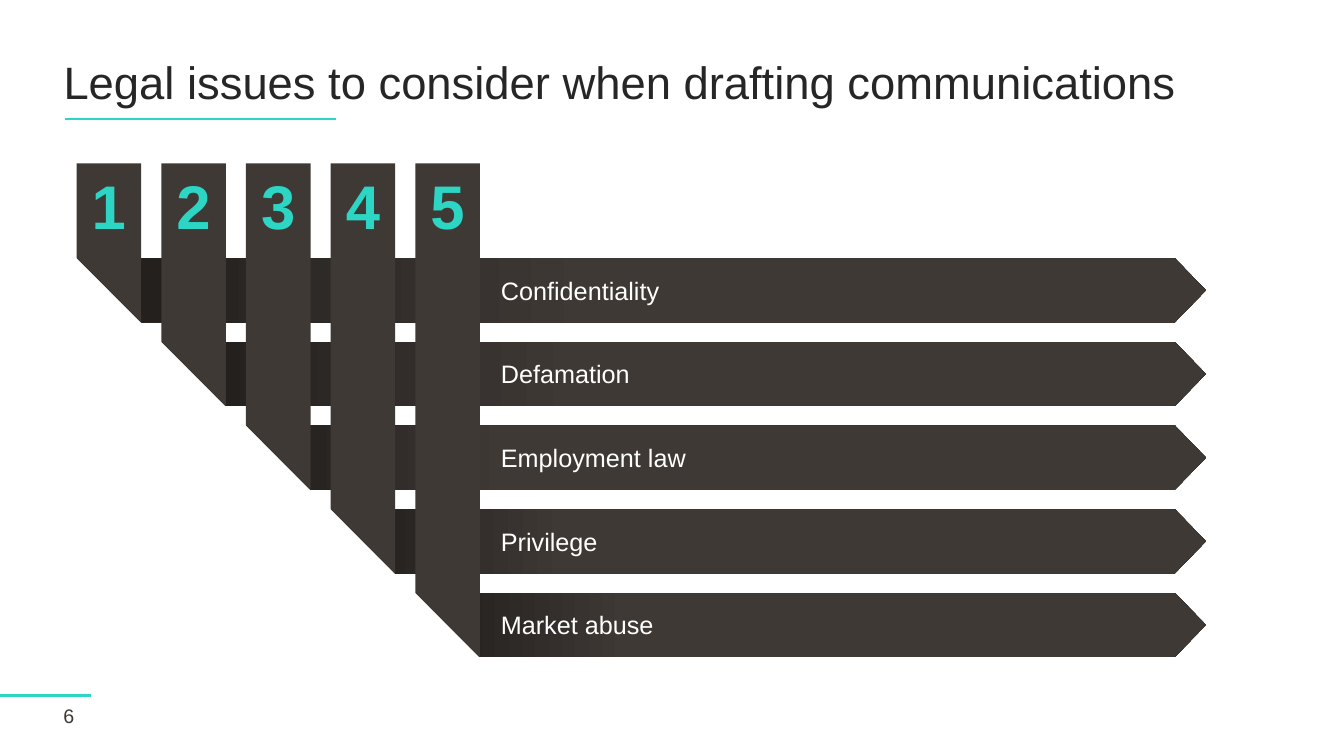
from pptx import Presentation, util as u
from pptx.dml.color import RGBColor
from pptx.enum import shapes, text
from pptx.oxml import parse_xml
from pptx.oxml.ns import nsdecls

COLORS = {
    "teal": "2CD5C4",
    "brown": "3E3935",
    "fold": "1F1C1A",
    "title": "262626",
    "white": "FFFFFF",
}
ISSUES = ["Confidentiality", "Defamation", "Employment law", "Privilege", "Market abuse"]
SHADE_ENDS = [0.46, 0.40, 0.27, 0.27, 0.27]

BAND = 0.64
COLUMN_LEFT, COLUMN_STEP, COLUMN_TOP = 0.76, 0.84, 1.62
ROW_TOP, ROW_STEP = 2.56, 0.83
ARROW_NECK, ARROW_TIP = 11.65, 11.96


def write(box, words, at, size, color, bold=False,
          align=text.PP_ALIGN.LEFT, anchor=text.MSO_ANCHOR.MIDDLE):
    """Place a text shape at (left, top, width, height) and fill it with one formatted line."""
    box.left, box.top, box.width, box.height = [u.Inches(length) for length in at]
    frame = box.text_frame
    frame.word_wrap = True
    frame.auto_size = text.MSO_AUTO_SIZE.NONE
    frame.vertical_anchor = anchor
    para = frame.paragraphs[0]
    para.alignment = align
    span = para.add_run()
    span.text = words
    span.font.name = "Arial"
    span.font.size = u.Pt(size)
    span.font.bold = bold
    span.font.color.rgb = RGBColor.from_string(COLORS[color])
    return para


def draw_outline(page, points):
    """Add a closed, borderless brown shape through points given in inches."""
    corners = [(u.Inches(x), u.Inches(y)) for x, y in points]
    builder = page.shapes.build_freeform(*corners[0])
    builder.add_line_segments(corners[1:], close=True)
    outline = builder.convert_to_shape()
    outline.shadow.inherit = False
    outline.line.fill.background()
    outline.fill.solid()
    outline.fill.fore_color.rgb = RGBColor.from_string(COLORS["brown"])
    return outline


deck = Presentation()
deck.slide_width, deck.slide_height = u.Inches(13.33), u.Inches(7.5)
page = deck.slides.add_slide(deck.slide_layouts[5])

# Title, accent rules and page number
heading = write(page.shapes.title, "Legal issues to consider when drafting communications",
                (0.53, 0.4, 12.24, 0.88), size=32.4, color="title")
heading.line_spacing = 0.9

for start, end, height in [(0.64, 3.33, 1.18), (0, 0.9, 6.9)]:
    rule = page.shapes.add_connector(shapes.MSO_CONNECTOR.STRAIGHT, u.Inches(start),
                                     u.Inches(height), u.Inches(end), u.Inches(height))
    rule.line.color.rgb = RGBColor.from_string(COLORS["teal"])
    rule.line.width = u.Pt(1.5)
    rule._element.spPr.append(parse_xml(f"<a:effectLst {nsdecls('a')}/>"))

write(page.shapes.add_textbox(0, 0, 0, 0), "6", (0.53, 6.98, 0.57, 0.24),
      size=14, color="brown")

# Each numbered column folds into the arrow that carries its issue
for index, (issue, shade_end) in enumerate(zip(ISSUES, SHADE_ENDS)):
    left = COLUMN_LEFT + index * COLUMN_STEP
    right = left + BAND
    top = ROW_TOP + index * ROW_STEP
    bottom = top + BAND

    arrow = draw_outline(page, [(left, top), (ARROW_NECK, top), (ARROW_TIP, top + BAND / 2),
                                (ARROW_NECK, bottom), (right, bottom)])
    arrow.fill.gradient()
    arrow.fill.gradient_angle = 0
    stops = arrow.fill.gradient_stops
    for stop, position, color in zip(stops, (0, shade_end), ("fold", "brown")):
        stop.position = position
        stop.color.rgb = RGBColor.from_string(COLORS[color])

    draw_outline(page, [(left, COLUMN_TOP), (right, COLUMN_TOP), (right, bottom), (left, top)])

    write(page.shapes.add_textbox(0, 0, 0, 0), str(index + 1), (left, 1.61, BAND, 0.84),
          size=44, color="teal", bold=True, align=text.PP_ALIGN.CENTER)
    write(page.shapes.add_textbox(0, 0, 0, 0), issue, (4.87, top + 0.12, 6.74, 0.4),
          size=18, color="white", anchor=text.MSO_ANCHOR.TOP)

deck.save("out.pptx")
